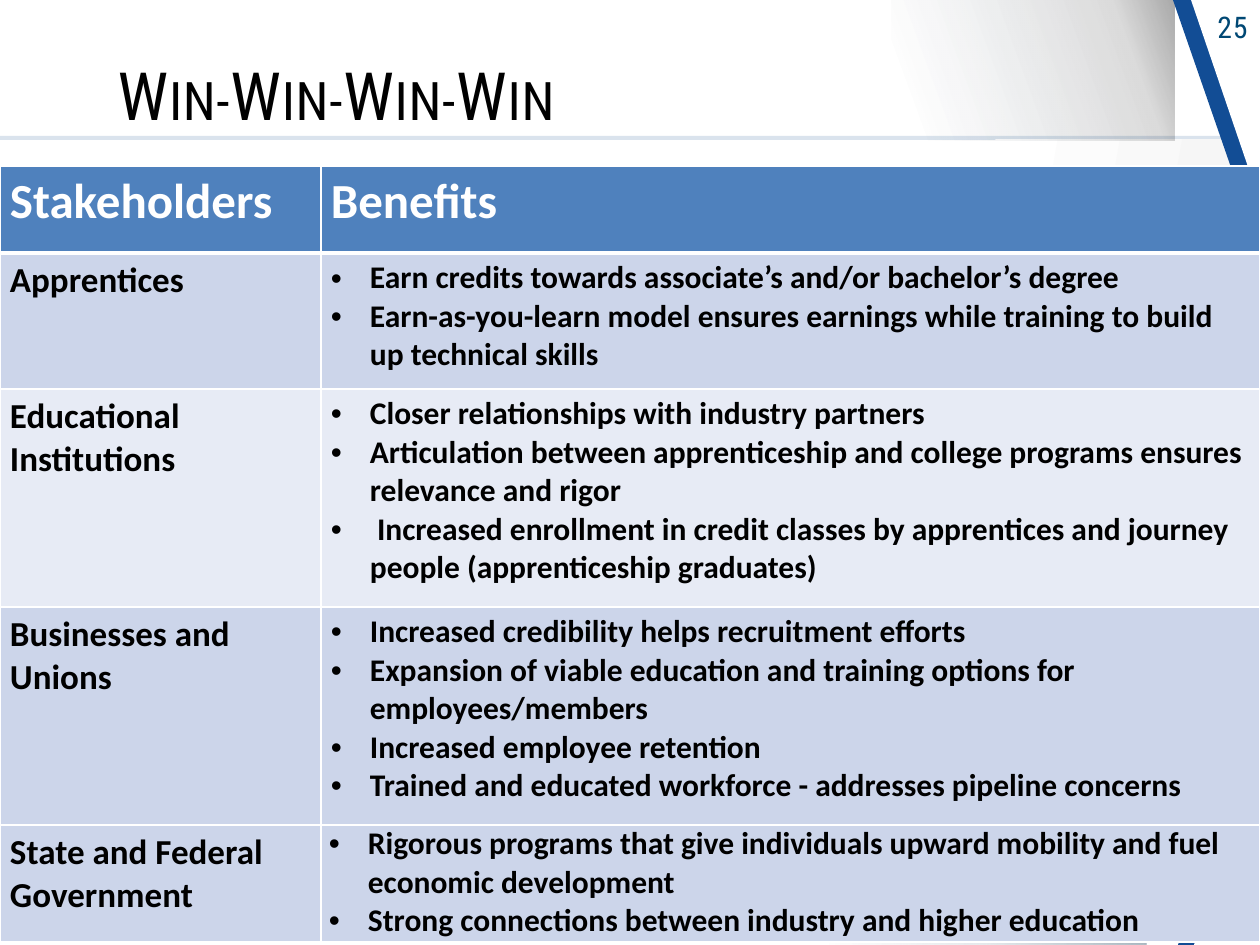
from pptx import Presentation
from pptx import util as u
from pptx.dml.color import RGBColor
from pptx.enum import shapes, text
from pptx.oxml import parse_xml
from pptx.oxml.ns import nsdecls

PX = 914400 / 126  # EMU in one px
HEADING_FONT = "Roboto Condensed"
BODY_FONT = "Calibri"
BLUE, WHITE, BLACK = "124D95", "FFFFFF", "000000"
HEADER_FILL, BAND_DARK, BAND_LIGHT = "4F81BD", "CCD5EA", "E7EBF5"

COLUMNS = [321, 939]
ROWS = [87, 136, 218, 218, 117]
HEADERS = ["Stakeholders", "Benefits"]
STAKEHOLDERS = [
    ("Apprentices", BAND_DARK, [
        "Earn credits towards associate’s and/or bachelor’s degree",
        "Earn-as-you-learn model ensures earnings while training to build up technical skills"]),
    ("Educational Institutions", BAND_LIGHT, [
        "Closer relationships with industry partners",
        "Articulation between apprenticeship and college programs ensures relevance and rigor",
        " Increased enrollment in credit classes by apprentices and journey people "
        "(apprenticeship graduates)"]),
    ("Businesses and Unions", BAND_DARK, [
        "Increased credibility helps recruitment efforts",
        "Expansion of viable education and training options for employees/members",
        "Increased employee retention",
        "Trained and educated workforce - addresses pipeline concerns"]),
    ("State and Federal Government", BAND_DARK, [
        "Rigorous programs that give individuals upward mobility and fuel economic development",
        "Strong connections between industry and higher education"]),
]


def px(length):
    return u.Emu(round(length * PX))


def color(value):
    return RGBColor.from_string(value)


def set_values(target, values):
    for name, value in values.items():
        setattr(target, name, value)


def place(shape, left, top, width, height):
    set_values(shape, {"left": px(left), "top": px(top),
                       "width": px(width), "height": px(height)})


def write(paragraph, words, size, hue, font=BODY_FONT, bold=False):
    run = paragraph.add_run()
    run.text = words
    set_values(run.font, {"name": font, "size": u.Pt(size), "bold": bold})
    run.font.color.rgb = color(hue)
    return run


def add_block(slide, kind, box, fill):
    shape = slide.shapes.add_shape(kind, *map(px, box))
    shape.shadow.inherit = False
    shape.line.fill.background()
    shape.fill.solid()
    shape.fill.fore_color.rgb = color(fill)
    return shape


def add_gradient(slide, box, stops, angle):
    """Stops are (position, colour, opacity), both numbers in percent."""
    shape = add_block(slide, shapes.MSO_SHAPE.RECTANGLE, box, WHITE)
    marks = "".join(
        f'<a:gs pos="{position * 1000}"><a:srgbClr val="{hue}">'
        f'<a:alpha val="{opacity * 1000}"/></a:srgbClr></a:gs>'
        for position, hue, opacity in stops)
    properties = shape._element.spPr
    solid = properties.find("{*}solidFill")
    properties.replace(solid, parse_xml(
        f'<a:gradFill {nsdecls("a")} rotWithShape="1"><a:gsLst>{marks}</a:gsLst>'
        f'<a:lin ang="{angle * 60000}" scaled="0"/></a:gradFill>'))


def add_wedge(slide, box, fill, flipped):
    shape = add_block(slide, shapes.MSO_SHAPE.ISOSCELES_TRIANGLE, box, fill)
    shape.adjustments[0] = 1
    if flipped:
        shape._element.spPr.xfrm.set("flipV", "1")


def add_backdrop(slide):
    # Centre panel with its edge shade
    add_gradient(slide, (0, 136, 1260, 703), [(0, "275A99", 16), (100, "275A99", 16)], 0)
    add_gradient(slide, (0, 140, 1260, 695),
                 [(0, WHITE, 100), (72, WHITE, 100), (90, "F6F6F6", 100), (100, "D9D9D9", 100)], 10)
    # Corner shades
    add_gradient(slide, (810, 837, 336, 108),
                 [(10, "002C47", 0), (56, "002C47", 11), (100, "002C47", 34)], 10)
    add_gradient(slide, (892, 0, 282, 141),
                 [(10, "002C47", 0), (81, BLACK, 14), (100, BLACK, 34)], 340)
    # Slanted stripes: a white wedge over a blue one
    add_wedge(slide, (1173, 0, 87, 251), BLUE, True)
    add_wedge(slide, (1191, 0, 69, 202), WHITE, True)
    add_wedge(slide, (1178, 694, 82, 251), BLUE, False)
    add_wedge(slide, (1194, 744, 66, 201), WHITE, False)


def add_page_number(slide, number):
    box = slide.shapes.add_textbox(*map(px, (1159, 3, 101, 49)))
    box.text_frame.word_wrap = True
    paragraph = box.text_frame.paragraphs[0]
    paragraph.alignment = text.PP_ALIGN.RIGHT
    run = write(paragraph, number, 17, "004874", HEADING_FONT)
    run.font._element.set("spc", "40")


def add_title(slide, words):
    title = slide.shapes.title
    place(title, 105, 53, 1050, 95)
    slide.shapes._spTree.append(title._element)  # in front of the backdrop
    set_values(title.text_frame, {"word_wrap": True, "auto_size": text.MSO_AUTO_SIZE.NONE,
                                  "vertical_anchor": text.MSO_ANCHOR.MIDDLE})
    paragraph = title.text_frame.paragraphs[0]
    set_values(paragraph, {"alignment": text.PP_ALIGN.LEFT, "line_spacing": 0.85})
    run = write(paragraph, words, 38, BLACK, HEADING_FONT)
    run.font._element.set("spc", "40")
    run.font._element.set("cap", "small")


def style_cell(cell, fill, top=1, bottom=1, inset=(10, 6)):
    side, end = map(px, inset)
    set_values(cell, {"margin_left": side, "margin_right": side,
                      "margin_top": end, "margin_bottom": end})
    properties = cell._tc.get_or_add_tcPr()
    for edge, width in (("L", 1), ("R", 1), ("T", top), ("B", bottom)):
        properties.append(parse_xml(
            f'<a:ln{edge} {nsdecls("a")} w="{width * 12700}"><a:solidFill>'
            f'<a:srgbClr val="{WHITE}"/></a:solidFill></a:ln{edge}>'))
    cell.fill.solid()
    cell.fill.fore_color.rgb = color(fill)


def write_bullets(cell, items):
    frame = cell.text_frame
    for index, item in enumerate(items):
        paragraph = frame.add_paragraph() if index else frame.paragraphs[0]
        properties = paragraph._p.get_or_add_pPr()
        properties.set("marL", str(px(39)))
        properties.set("indent", str(-px(39)))
        properties.append(parse_xml(f'<a:buFont {nsdecls("a")} typeface="Arial"/>'))
        properties.append(parse_xml(f'<a:buChar {nsdecls("a")} char="•"/>'))
        write(paragraph, item, 18, BLACK, bold=True)


def add_benefits_table(slide):
    frame = slide.shapes.add_table(len(ROWS), len(COLUMNS), px(0), px(166),
                                   px(sum(COLUMNS)), px(sum(ROWS)))
    table = frame.table
    for column, width in zip(table.columns, COLUMNS):
        column.width = px(width)
    for row, height in zip(table.rows, ROWS):
        row.height = px(height)
    # Header row
    for index, header in enumerate(HEADERS):
        cell = table.cell(0, index)
        style_cell(cell, HEADER_FILL, bottom=3)
        write(cell.text_frame.paragraphs[0], header, 28, WHITE, bold=True)
    # One row for each stakeholder
    for index, (name, fill, benefits) in enumerate(STAKEHOLDERS, 1):
        top = 3 if index == 1 else 1
        inset = (8, 0) if index == len(STAKEHOLDERS) else (10, 6)
        name_cell, benefits_cell = table.cell(index, 0), table.cell(index, 1)
        style_cell(name_cell, fill, top)
        write(name_cell.text_frame.paragraphs[0], name, 20, BLACK, bold=True)
        style_cell(benefits_cell, fill, top, inset=inset)
        write_bullets(benefits_cell, benefits)


def main():
    presentation = Presentation()
    set_values(presentation, {"slide_width": px(1260), "slide_height": px(945)})
    slide = presentation.slides.add_slide(presentation.slide_layouts[5])
    add_backdrop(slide)
    add_page_number(slide, "25")
    add_title(slide, "Win-Win-Win-Win")
    add_benefits_table(slide)
    presentation.save("out.pptx")


if __name__ == "__main__":
    main()
